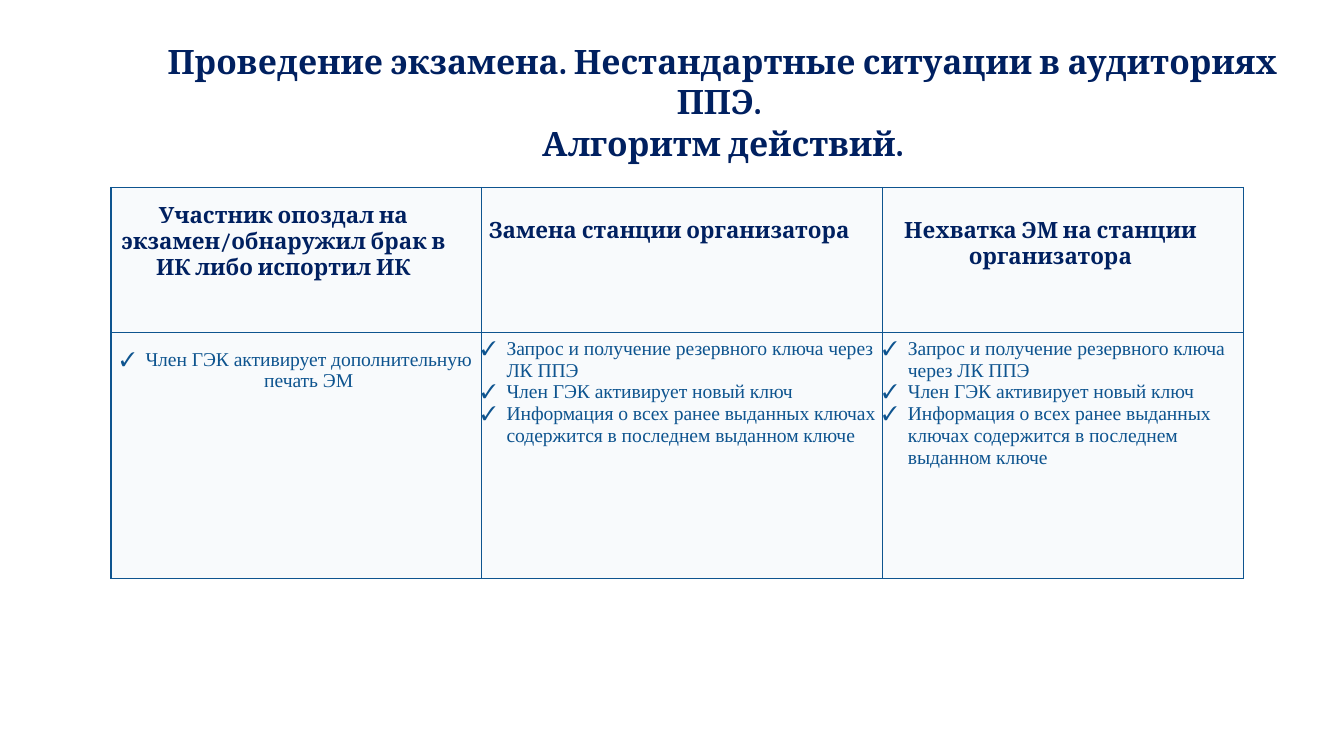
from lxml import etree
from pptx import Presentation
from pptx.dml.color import RGBColor
from pptx.enum.text import MSO_ANCHOR, PP_ALIGN
from pptx.oxml.ns import qn
from pptx.util import Pt

CENTER, LEFT = PP_ALIGN.CENTER, PP_ALIGN.LEFT
TOP = MSO_ANCHOR.TOP
NAVY, BLUE, PALE = "002060", "0E548F", "DCE6F1"
SERIF, ROMAN = "Cambria", "Times New Roman"
COLUMNS = [198.5, 215, 193.3]
ROWS = [77.8, 131.8]
INDENT = 13.5

HEADERS = [
    ("Участник опоздал на экзамен/обнаружил брак в ИК либо испортил ИК", 8.6),
    ("Замена станции организатора", 16.7),
    ("Нехватка ЭМ на станции организатора", 16.7),
]
KEY_STEPS = [
    "Запрос и получение резервного ключа через ЛК ППЭ",
    "Член ГЭК активирует новый ключ",
    "Информация о всех ранее выданных ключах содержится в последнем выданном ключе",
]
ACTIONS = [
    (["Член ГЭК активирует дополнительную печать ЭМ"], 8.6, CENTER),
    (KEY_STEPS, 2.9, LEFT),
    (KEY_STEPS, 2.9, LEFT),
]


def rgb(color):
    """Turn a hex string into a colour."""
    return RGBColor.from_string(color)


def add_bullet(p):
    """Give a paragraph a hanging check mark."""
    pPr = p._p.get_or_add_pPr()
    pPr.set("marL", str(Pt(INDENT)))
    pPr.set("indent", str(-Pt(INDENT)))
    etree.SubElement(pPr, qn("a:buFont"), typeface=ROMAN)
    etree.SubElement(pPr, qn("a:buChar"), char="✓")


def write(tf, lines, font, size, color, bold=False, align=CENTER,
          bullets=False, gap=0):
    """Write one paragraph for each line."""
    for i, line in enumerate(lines):
        p = tf.paragraphs[0] if i == 0 else tf.add_paragraph()
        p.alignment = align
        if i and gap:
            p.space_before = Pt(gap)
        if bullets:
            add_bullet(p)
        r = p.add_run()
        r.text = line
        r.font.name = font
        r.font.size = Pt(size)
        r.font.bold = bold
        r.font.color.rgb = rgb(color)


def style_cell(cell, top, right=0):
    """Set margins, translucent fill and borders of a cell."""
    cell.margin_left = cell.margin_bottom = 0
    cell.margin_top, cell.margin_right = Pt(top), Pt(right)
    cell.vertical_anchor = TOP
    cell.fill.solid()
    cell.fill.fore_color.rgb = rgb(PALE)
    tcPr = cell._tc.get_or_add_tcPr()
    clr = tcPr.find(qn("a:solidFill")).find(qn("a:srgbClr"))
    etree.SubElement(clr, qn("a:alpha"), val="18000")
    for i, side in enumerate(("lnL", "lnR", "lnT", "lnB")):
        ln = etree.Element(qn("a:" + side), w=str(Pt(0.75)))
        fill = etree.SubElement(ln, qn("a:solidFill"))
        etree.SubElement(fill, qn("a:srgbClr"), val=BLUE)
        tcPr.insert(i, ln)


def add_title(s):
    """Add the slide title."""
    tf = s.shapes.add_textbox(Pt(77), Pt(20.9), Pt(620.6), Pt(45.4)).text_frame
    tf.word_wrap = True
    tf.vertical_anchor = TOP
    tf.margin_left = tf.margin_right = tf.margin_bottom = 0
    tf.margin_top = Pt(1)
    write(tf, ["Проведение экзамена. Нестандартные ситуации в аудиториях ППЭ. ",
               "Алгоритм действий."], SERIF, 18, NAVY, bold=True, gap=0.9)


def add_situations(s):
    """Add the table of situations and actions."""
    table = s.shapes.add_table(len(ROWS), len(COLUMNS), Pt(59.4), Pt(100.4),
                               Pt(sum(COLUMNS)), Pt(sum(ROWS))).table
    table.first_row = table.horz_banding = False
    for column, width in zip(table.columns, COLUMNS):
        column.width = Pt(width)
    for row, height in zip(table.rows, ROWS):
        row.height = Pt(height)
    for i, (text, top) in enumerate(HEADERS):
        cell = table.cell(0, i)
        style_cell(cell, top, right=INDENT)
        write(cell.text_frame, [text], SERIF, 12, NAVY, bold=True)
    for i, (steps, top, align) in enumerate(ACTIONS):
        cell = table.cell(1, i)
        style_cell(cell, top)
        write(cell.text_frame, steps, ROMAN, 10.5, BLUE, align=align, bullets=True)


def main():
    """Build the slide and save it."""
    prs = Presentation()
    prs.slide_width, prs.slide_height = Pt(720), Pt(405)
    s = prs.slides.add_slide(prs.slide_layouts[6])
    add_title(s)
    add_situations(s)
    prs.save("out.pptx")


if __name__ == "__main__":
    main()
